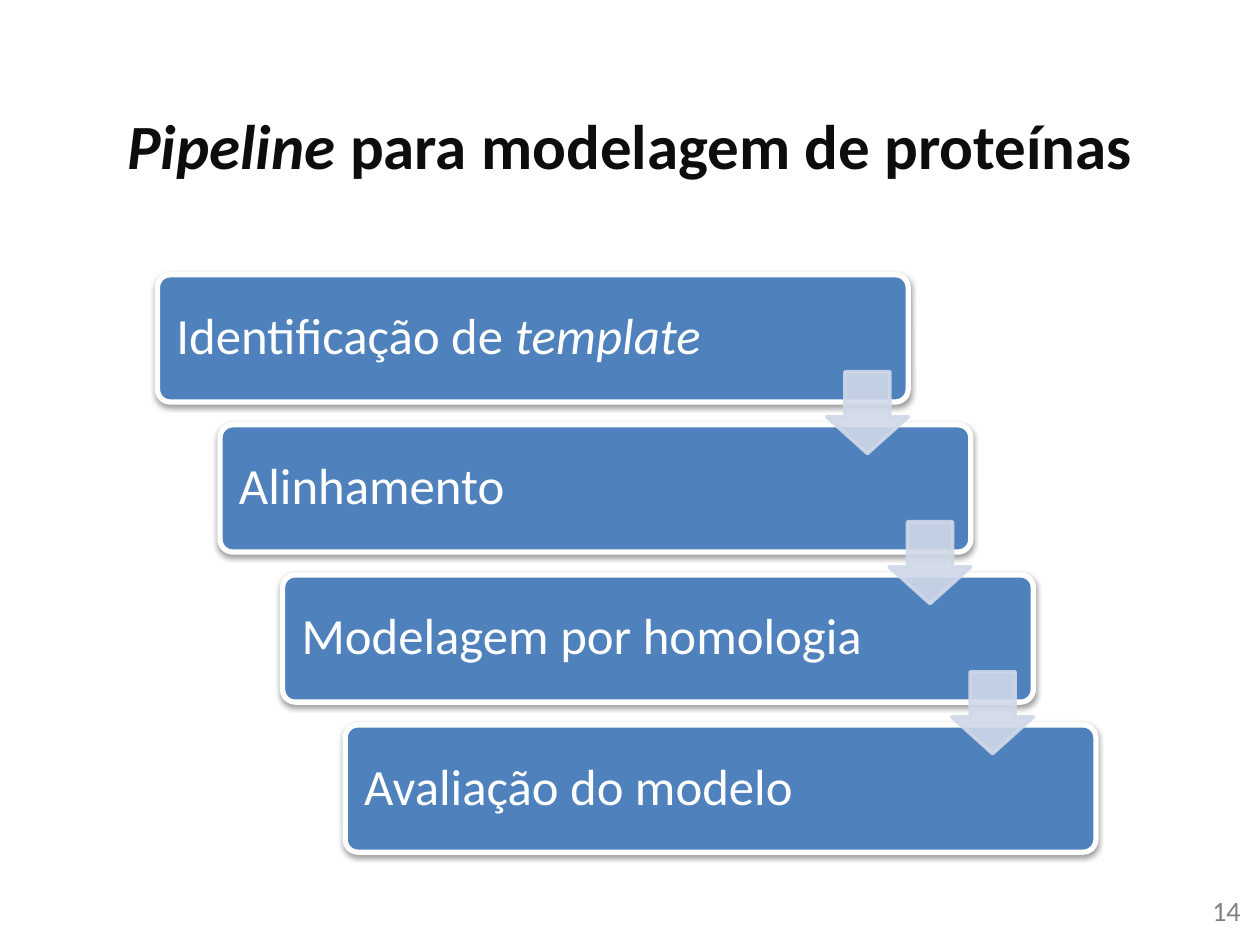
from lxml.etree import SubElement
from pptx import Presentation
from pptx.dml.color import RGBColor
from pptx.enum.shapes import MSO_SHAPE
from pptx.enum.text import MSO_ANCHOR, PP_ALIGN
from pptx.oxml.ns import qn
from pptx.util import Pt

WHITE = RGBColor(0xFF, 0xFF, 0xFF)
INK = RGBColor(0x0D, 0x0D, 0x0D)
GRAY = RGBColor(0x80, 0x80, 0x80)
BLUE = RGBColor(0x4F, 0x81, 0xBD)
PALE = RGBColor(0xD0, 0xD8, 0xE8)

STEPS = [
    [("Identificação de ", False), ("template", True)],
    [("Alinhamento", False)],
    [("Modelagem por homologia", False)],
    [("Avaliação do modelo", False)],
]
LEFT, TOP = 90, 157
STEP_X, STEP_Y = 35.75, 85.75
BOX_W, BOX_H = 429, 72.7
ARROW_X, ARROW_Y, ARROW_SIZE = 382.3, 55.4, 46.8


def write(tf, runs, size, color, align, bold=False):
    """Fill the first paragraph of a text frame with (text, italic) runs."""
    tf.word_wrap = True
    p = tf.paragraphs[0]
    p.alignment = align
    for text, italic in runs:
        r = p.add_run()
        r.text = text
        r.font.name = "Calibri"
        r.font.size = Pt(size)
        r.font.color.rgb = color
        r.font.bold = bold
        r.font.italic = italic
    return p


def add_text(slide, box, runs, size, color, align, anchor, bold=False):
    """Add a text box at box = (left, top, width, height)."""
    tf = slide.shapes.add_textbox(*map(Pt, box)).text_frame
    tf.vertical_anchor = anchor
    write(tf, runs, size, color, align, bold)


def add_shape(slide, kind, box, adjustments, fill, line, width):
    """Add a filled and outlined preset shape without a shadow."""
    sp = slide.shapes.add_shape(kind, *map(Pt, box))
    for i, value in enumerate(adjustments):
        sp.adjustments[i] = value
    sp.fill.solid()
    sp.fill.fore_color.rgb = fill
    sp.line.color.rgb = line
    sp.line.width = Pt(width)
    sp.shadow.inherit = False
    return sp


def add_alpha(color, percent):
    """Set the opacity of a colour element."""
    SubElement(color, qn("a:alpha"), val=str(percent * 1000))


def add_shadow(sp):
    """Give a shape a soft black shadow below it."""
    effects = sp._element.spPr.find(qn("a:effectLst"))
    shadow = SubElement(effects, qn("a:outerShdw"), blurRad=str(Pt(3.1)),
                        dist=str(Pt(1.6)), dir="5400000", rotWithShape="0")
    add_alpha(SubElement(shadow, qn("a:srgbClr"), val="000000"), 38)


def add_step(slide, index, runs):
    """Add one box of the staircase."""
    box = (LEFT + index * STEP_X, TOP + index * STEP_Y, BOX_W, BOX_H)
    sp = add_shape(slide, MSO_SHAPE.ROUNDED_RECTANGLE, box, [0.1], BLUE, WHITE, 3)
    add_shadow(sp)
    tf = sp.text_frame
    tf.margin_left = tf.margin_right = tf.margin_top = tf.margin_bottom = Pt(8.7)
    tf.vertical_anchor = MSO_ANCHOR.MIDDLE
    write(tf, runs, 29, WHITE, PP_ALIGN.LEFT).line_spacing = 0.9


def add_arrow(slide, index):
    """Add the translucent arrow from one box to the next."""
    box = (LEFT + ARROW_X + index * STEP_X, TOP + ARROW_Y + index * STEP_Y,
           ARROW_SIZE, ARROW_SIZE)
    sp = add_shape(slide, MSO_SHAPE.DOWN_ARROW, box, [0.55, 0.45], PALE, PALE, 2)
    for color in sp._element.spPr.iter(qn("a:srgbClr")):
        add_alpha(color, 90)


def main():
    """Build the slide and save it."""
    prs = Presentation()
    prs.slide_width, prs.slide_height = Pt(720), Pt(540)
    slide = prs.slides.add_slide(prs.slide_layouts[6])
    add_text(slide, (36, 37.5, 648, 90),
             [("Pipeline ", True), ("para modelagem de proteínas", False)],
             36, INK, PP_ALIGN.CENTER, MSO_ANCHOR.MIDDLE, bold=True)
    add_text(slide, (548, 507, 168, 28.8), [("14", False)],
             16, GRAY, PP_ALIGN.RIGHT, MSO_ANCHOR.TOP)
    for i, runs in enumerate(STEPS):
        add_step(slide, i, runs)
    for i in range(len(STEPS) - 1):
        add_arrow(slide, i)
    prs.save("out.pptx")


if __name__ == "__main__":
    main()
